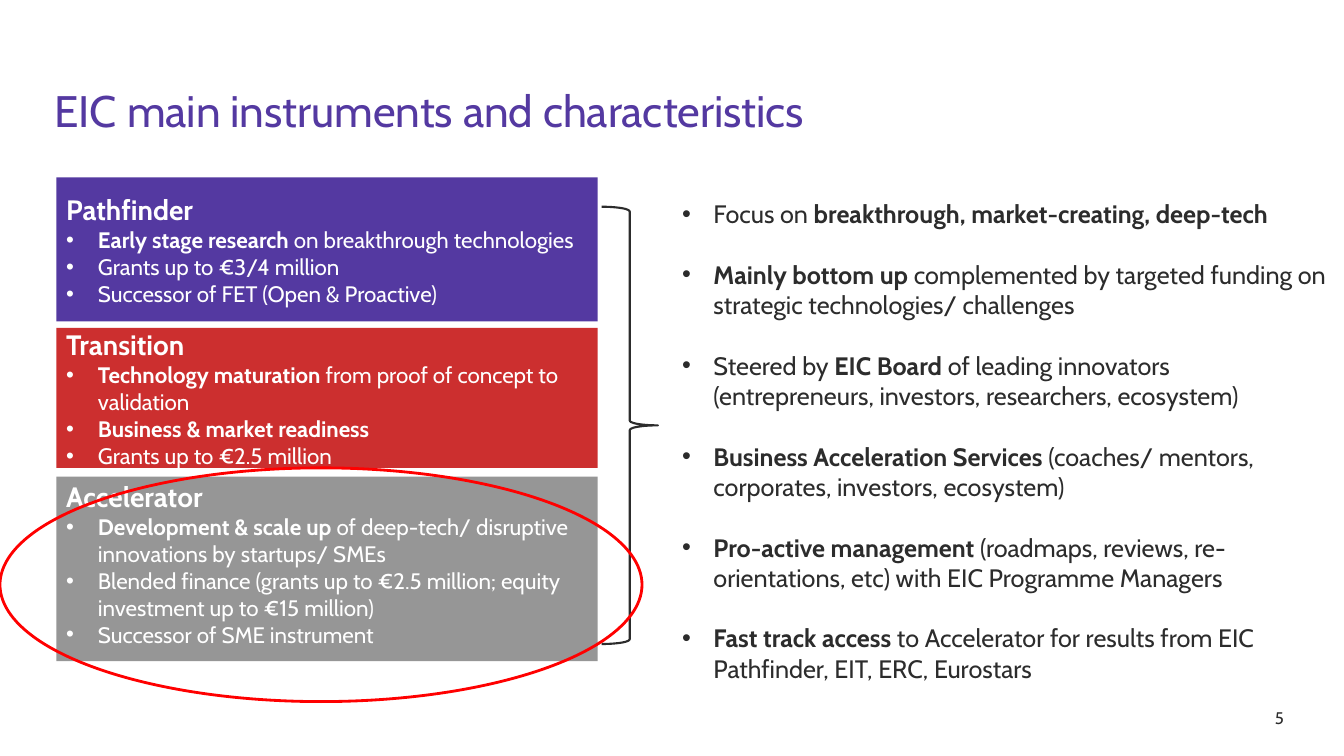
import pptx
import pptx.dml.color
import pptx.enum.shapes
import pptx.enum.text
import pptx.util
from lxml import etree
from pptx.oxml.ns import qn

Cm = pptx.util.Cm
Pt = pptx.util.Pt
RGBColor = pptx.dml.color.RGBColor
Preset = pptx.enum.shapes.MSO_SHAPE

PURPLE = RGBColor(0x54, 0x39, 0xA1)
RED = RGBColor(0xCC, 0x2F, 0x2F)
GREY = RGBColor(0x96, 0x96, 0x96)
INK = RGBColor(0x2C, 0x2C, 0x2C)
WHITE = RGBColor(0xFF, 0xFF, 0xFF)
HIGHLIGHT = RGBColor(0xFF, 0x00, 0x00)
FONT = "Cabin"

CARD_LEFT, CARD_WIDTH = Cm(1.42), Cm(13.64)
CARDS = [
    (PURPLE, 4.47, 3.63, 0.39, "Pathfinder", [
        "**Early stage research **on breakthrough technologies",
        "Grants up to €3/4 million",
        "Successor of FET (Open & Proactive)",
    ]),
    (RED, 8.26, 3.53, 0, "Transition", [
        "**Technology maturation **from proof of concept to validation",
        "**Business & market readiness**",
        "Grants up to €2.5 million",
    ]),
    (GREY, 12.01, 4.65, 0.08, "Accelerator", [
        "**Development & scale up **of deep-tech/ disruptive innovations by startups/ SMEs",
        "Blended finance (grants up to €2.5 million; equity investment up to €15 million)",
        "Successor of SME instrument",
    ]),
]
CHARACTERISTICS = [
    "Focus on **breakthrough, market-creating, deep-tech**",
    "**Mainly bottom up **complemented by targeted funding on strategic technologies/ challenges",
    "Steered by **EIC Board **of leading innovators (entrepreneurs, investors, researchers, ecosystem)",
    "**Business Acceleration Services **(coaches/ mentors, corporates, investors, ecosystem)",
    "**Pro-active management **(roadmaps, reviews, re-orientations, etc) with EIC Programme Managers",
    "**Fast track access **to Accelerator for results from EIC Pathfinder, EIT, ERC, Eurostars",
]


def place(shape, left, top, width, height):
    shape.left, shape.top, shape.width, shape.height = left, top, width, height


def prepare_frame(shape, top_inset=0):
    frame = shape.text_frame
    frame.word_wrap = True
    frame.auto_size = pptx.enum.text.MSO_AUTO_SIZE.NONE
    frame.vertical_anchor = pptx.enum.text.MSO_ANCHOR.TOP
    frame.margin_left = frame.margin_right = Cm(0.25)
    frame.margin_top, frame.margin_bottom = Cm(top_inset), 0
    return frame


def set_bullet(paragraph, indent):
    properties = paragraph._p.get_or_add_pPr()
    properties.set("marL", str(indent))
    properties.set("indent", str(-indent))
    etree.SubElement(properties, qn("a:buFont")).set("typeface", "Arial")
    etree.SubElement(properties, qn("a:buChar")).set("char", "•")


def write_text(frame, text, size, color, bold=False, bullet_indent=None,
               space_before=0, line_spacing=1.0):
    first = frame.paragraphs[0]
    paragraph = frame.add_paragraph() if first.runs else first
    if bullet_indent is not None:
        set_bullet(paragraph, bullet_indent)
    paragraph.alignment = pptx.enum.text.PP_ALIGN.LEFT
    paragraph.space_before = Pt(space_before)
    paragraph.space_after = Pt(0)
    paragraph.line_spacing = line_spacing
    for position, part in enumerate(text.split("**")):
        if part:
            run = paragraph.add_run()
            run.text = part
            run.font.name = FONT
            run.font.size = Pt(size)
            run.font.bold = bold or position % 2 == 1
            run.font.color.rgb = color


def add_card(slide, color, top, height, top_inset, heading, points):
    card = slide.shapes.add_shape(
        Preset.RECTANGLE, CARD_LEFT, Cm(top), CARD_WIDTH, Cm(height))
    card.shadow.inherit = False
    card.fill.solid()
    card.fill.fore_color.rgb = color
    card.line.fill.background()
    frame = prepare_frame(card, top_inset)
    write_text(frame, heading, size=20, color=WHITE, bold=True)
    for point in points:
        write_text(frame, point, size=16, color=WHITE, bullet_indent=Cm(0.8))


def add_outline(slide, preset, color, weight, left, top, width, height):
    outline = slide.shapes.add_shape(preset, left, top, width, height)
    outline.shadow.inherit = False
    outline.fill.background()
    outline.line.color.rgb = color
    outline.line.width = Pt(weight)


def fill_title(slide):
    title = slide.shapes.title
    place(title, Cm(1.12), Cm(2.26), Cm(30.68), Cm(2.44))
    write_text(prepare_frame(title), "EIC main instruments and characteristics",
               size=31.5, color=PURPLE, line_spacing=0.9)


def fill_characteristics(slide):
    body = slide.placeholders[1]
    place(body, Cm(16.94), Cm(4.11), Cm(16.93), Cm(13.5))
    frame = prepare_frame(body, top_inset=0.89)
    for index, characteristic in enumerate(CHARACTERISTICS):
        write_text(frame, characteristic, size=18, color=INK,
                   bullet_indent=Cm(0.79), space_before=21.75 if index else 0)


def add_page_number(slide):
    box = slide.shapes.add_textbox(Cm(31.88), Cm(17.7), Cm(1.5), Cm(1.02))
    write_text(prepare_frame(box, top_inset=0.13), "5", size=12, color=INK)


def main():
    presentation = pptx.Presentation()
    presentation.slide_width = Cm(33.87)
    presentation.slide_height = Cm(19.05)
    slide = presentation.slides.add_slide(presentation.slide_layouts[1])
    fill_title(slide)
    fill_characteristics(slide)
    add_page_number(slide)
    for card in CARDS:
        add_card(slide, *card)
    add_outline(slide, Preset.RIGHT_BRACE, INK, 1.5,
                Cm(15.16), Cm(5.21), Cm(1.42), Cm(11.02))
    add_outline(slide, Preset.OVAL, HIGHLIGHT, 2,
                Cm(0), Cm(11.79), Cm(16.18), Cm(5.89))
    presentation.save("out.pptx")


if __name__ == "__main__":
    main()
